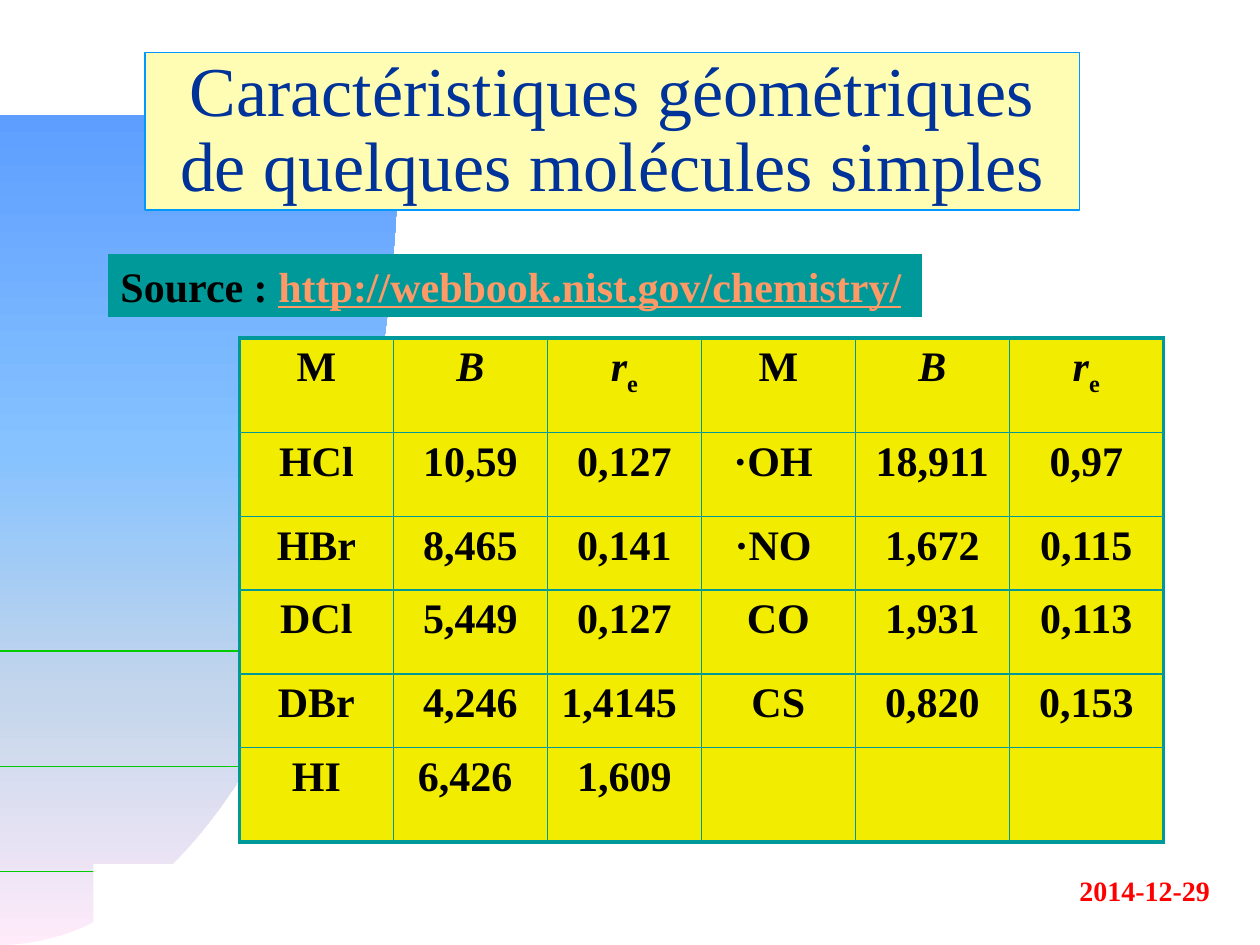
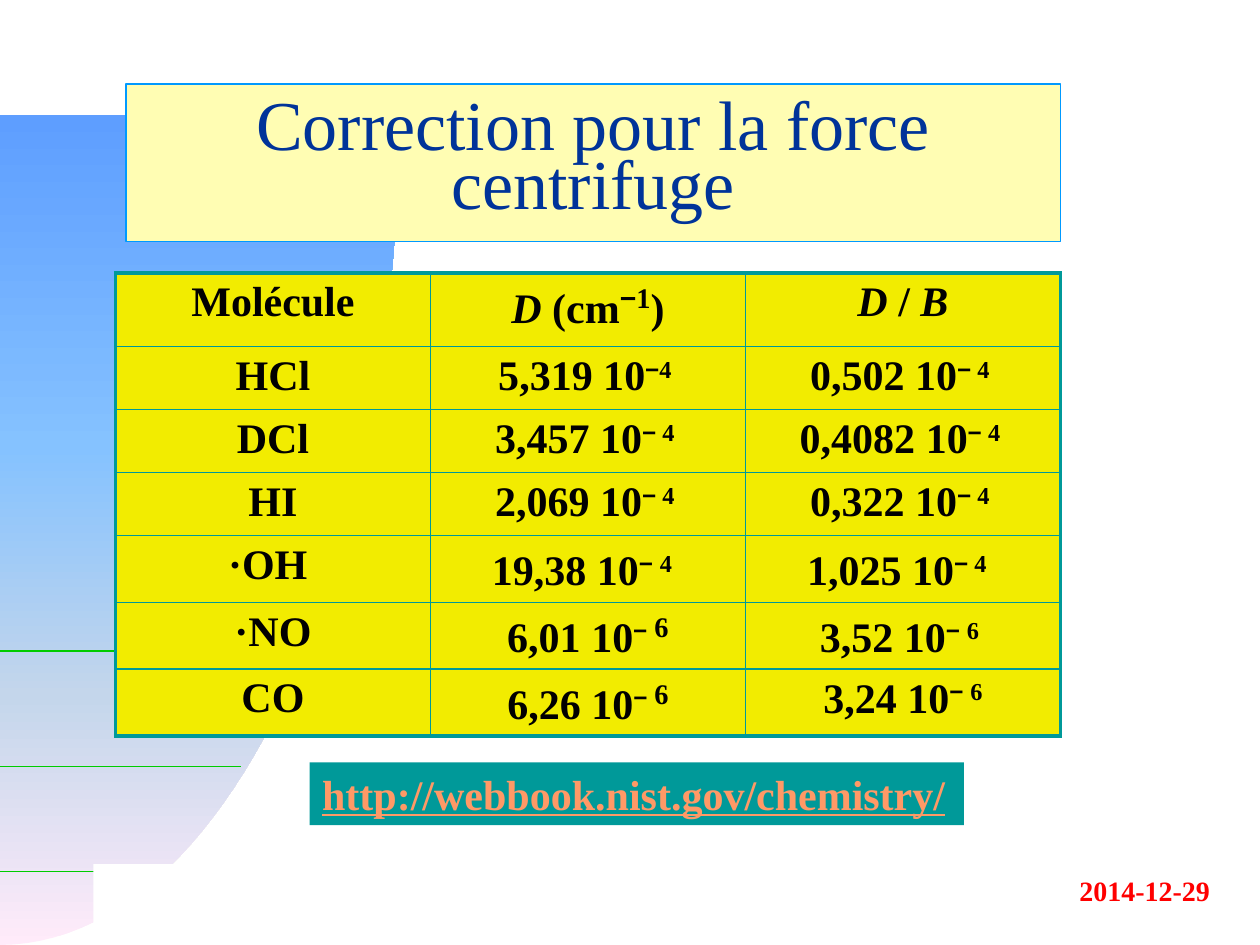
from lxml import etree
from pptx import Presentation
from pptx.dml.color import RGBColor
from pptx.enum.shapes import MSO_CONNECTOR, MSO_SHAPE
from pptx.enum.text import MSO_ANCHOR, MSO_AUTO_SIZE, PP_ALIGN
from pptx.oxml.ns import qn
from pptx.util import Inches, Pt

LEFT, CENTER, RIGHT = PP_ALIGN.LEFT, PP_ALIGN.CENTER, PP_ALIGN.RIGHT
MIDDLE = MSO_ANCHOR.MIDDLE
NO_FIT, GROW = MSO_AUTO_SIZE.NONE, MSO_AUTO_SIZE.SHAPE_TO_FIT_TEXT
RECT, STRAIGHT = MSO_SHAPE.RECTANGLE, MSO_CONNECTOR.STRAIGHT
TITLE_ONLY = 5

COLUMNS, ROWS = 120, 90
SERIF, SANS = "Times New Roman", "Arial"
NAVY, CREAM, SKY = "003399", "FFFDB3", "0099FF"
TEAL, YELLOW, ORANGE = "009999", "F2EC00", "FF9966"
GREEN, RED, WHITE, BLACK = "00CC00", "FF0000", "FFFFFF", "010000"
ARC_STOPS = [(0, "FFEBFA"), (30, "C4D6EB"), (60, "85C2FF"), (100, "5E9EFF")]
ARC_CURVE = [(0, 90), (21, 90), (38, 54.7), (38, 11)]
ARC_STEPS = 48
GREEN_LINES = [(23, 73), (29, 62), (16, 83)]
OUTER, INNER = 2.25, 1

URL = "http://webbook.nist.gov/chemistry/"
DATE = "2014-12-29"


def rgb(code):
    return RGBColor.from_string(code)


def bezier(points, t):
    weights = ((1 - t) ** 3, 3 * t * (1 - t) ** 2, 3 * t * t * (1 - t), t ** 3)
    return [sum(w * v for w, v in zip(weights, axis)) for axis in zip(*points)]


class Deck:
    """Holds the style and the current slide; lengths are grid columns and rows."""

    def __init__(self):
        self.prs = Presentation()
        self.prs.slide_width, self.prs.slide_height = Inches(10), Inches(7.5)
        self.s = None

    def x(self, columns):
        return round(self.prs.slide_width * columns / COLUMNS)

    def y(self, rows):
        return round(self.prs.slide_height * rows / ROWS)

    def box(self, left, top, width, height):
        return self.x(left), self.y(top), self.x(width), self.y(height)

    def new_slide(self, title, left, top, spacing):
        self.s = self.prs.slides.add_slide(self.prs.slide_layouts[TITLE_ONLY])
        self.arc()
        for length, row in GREEN_LINES:
            self.line(length, row)
        self.date()
        self.rect(8.9, 82.3, 19.6, 5.6, WHITE)
        self.title(title, left, top, spacing)

    def arc(self):
        curve = [bezier(ARC_CURVE, i / ARC_STEPS) for i in range(ARC_STEPS + 1)]
        points = [(self.x(col), self.y(row)) for col, row in curve + [(0, 11)]]
        builder = self.s.shapes.build_freeform(*points[0], scale=1.0)
        builder.add_line_segments(points[1:], close=True)
        sp = builder.convert_to_shape()
        sp.shadow.inherit = False
        sp.line.fill.background()
        sp.fill.gradient()
        sp.fill.gradient_angle = 90
        stops = sp.element.find(".//" + qn("a:gsLst"))
        for old in list(stops):
            stops.remove(old)
        for percent, code in ARC_STOPS:
            stop = etree.SubElement(stops, qn("a:gs"), pos=str(percent * 1000))
            etree.SubElement(stop, qn("a:srgbClr"), val=code)

    def line(self, length, row):
        ends = 0, self.y(row), self.x(length), self.y(row)
        cn = self.s.shapes.add_connector(STRAIGHT, *ends)
        cn.line.color.rgb = rgb(GREEN)
        cn.line.width = Pt(0.75)
        etree.SubElement(cn.element.spPr, qn("a:effectLst"))

    def rect(self, left, top, width, height, fill):
        sp = self.s.shapes.add_shape(RECT, *self.box(left, top, width, height))
        sp.shadow.inherit = False
        sp.fill.solid()
        sp.fill.fore_color.rgb = rgb(fill)
        sp.line.fill.background()
        return sp

    def run(self, p, text, size=24, color=BLACK, bold=True, italic=False,
            font=SERIF, underline=False, base=0):
        r = p.add_run()
        r.text = text
        r.font.name, r.font.size = font, Pt(size)
        r.font.bold, r.font.italic = bold, italic
        r.font.underline = underline
        r.font.color.rgb = rgb(color)
        if base:
            r.font._element.set("baseline", str(base * 1000))

    def date(self):
        tf = self.s.shapes.add_textbox(*self.box(98.4, 82.6, 18, 4.4)).text_frame
        tf.word_wrap = True
        p = tf.paragraphs[0]
        p.alignment = RIGHT
        self.run(p, DATE, size=16, color=RED)

    def title(self, text, left, top, spacing):
        sp = self.s.shapes.title
        sp.element.getparent().append(sp.element)  # above the background
        sp.left, sp.top, sp.width, sp.height = self.box(left, top, 89, 15)
        sp.fill.solid()
        sp.fill.fore_color.rgb = rgb(CREAM)
        sp.line.color.rgb = rgb(SKY)
        sp.line.width = Pt(0.75)
        tf = sp.text_frame
        tf.word_wrap, tf.auto_size, tf.vertical_anchor = True, NO_FIT, MIDDLE
        p = tf.paragraphs[0]
        p.alignment, p.line_spacing = CENTER, spacing
        self.run(p, text, size=40, color=NAVY, bold=False)

    def source(self, left, top, width, label=""):
        tf = self.rect(left, top, width, 6, TEAL).text_frame
        tf.word_wrap, tf.auto_size = False, GROW
        p = tf.paragraphs[0]
        p.alignment = LEFT
        if label:
            self.run(p, label)
        self.run(p, URL, color=ORANGE, underline=True)

    def border(self, cell, tag, width):
        props = cell._tc.get_or_add_tcPr()
        ln = etree.SubElement(props, qn(tag), w=str(Pt(width)))
        fill = etree.SubElement(ln, qn("a:solidFill"))
        etree.SubElement(fill, qn("a:srgbClr"), val=TEAL)

    def table(self, left, top, width, heights, data):
        n_rows, n_cols = len(data), len(data[0])
        frame = self.s.shapes.add_table(
            n_rows, n_cols, *self.box(left, top, width, sum(heights)))
        tbl = frame.table
        tbl.first_row = tbl.horz_banding = False
        for row, height in zip(tbl.rows, heights):
            row.height = self.y(height)
        for i, values in enumerate(data):
            for j, runs in enumerate(values):
                cell = tbl.cell(i, j)
                edges = {"a:lnL": j == 0, "a:lnR": j == n_cols - 1,
                         "a:lnT": i == 0, "a:lnB": i == n_rows - 1}
                for tag, outside in edges.items():
                    self.border(cell, tag, OUTER if outside else INNER)
                cell.fill.solid()
                cell.fill.fore_color.rgb = rgb(YELLOW)
                p = cell.text_frame.paragraphs[0]
                p.alignment = CENTER
                for text, style in runs:
                    self.run(p, text, **style)


def plain(text):
    return [(text, {})] if text else []


def italic(text):
    return (text, {"italic": True})


def power(mantissa, exponent, minus="−", size=24, tail=None):
    """Runs of a number times a negative power of ten."""
    runs = [(mantissa + " 10", {}), (minus, {"font": SANS, "base": 30}),
            (exponent, {"size": size, "base": 30})]
    return runs + ([tail] if tail else [])


BIG_SPACE = (" ", {"size": 28})
RAISED_SPACE = (" ", {"size": 28, "base": 30})

GEOMETRY_HEAD = [plain("M"), [italic("B")], [italic("r"), ("e", {"base": -25})]]
GEOMETRY = [
    ["HCl", "10,59", "0,127", "·OH ", "18,911", "0,97"],
    ["HBr", "8,465", "0,141", "·NO ", "1,672", "0,115"],
    ["DCl", "5,449", "0,127", "CO", "1,931", "0,113"],
    ["DBr", "4,246", "1,4145 ", "CS", "0,820", "0,153"],
    ["HI", "6,426 ", "1,609", "", "", ""],
]
CENTRIFUGAL = [
    [plain("Molécule"),
     [italic("D "), ("(cm", {}), ("−", {"size": 28, "font": SANS, "base": 30}),
      ("1", {"size": 28, "base": 30}), (")", {})],
     [italic("D"), (" / ", {}), italic("B")]],
    [plain("HCl"), power("5,319", "4 "), power("0,502", " 4 ")],
    [plain("DCl"), power("3,457", " 4 "), power("0,4082", " 4 ")],
    [plain("HI"), power("2,069", " 4 "), power("0,322", " 4 ")],
    [plain("·OH "), power("19,38", "4", "− ", tail=BIG_SPACE),
     power("1,025", " 4", tail=BIG_SPACE)],
    [plain("·NO"), power("6,01", " 6", size=28),
     power("3,52", "6", "− ", tail=RAISED_SPACE)],
    [plain("CO"), power("6,26", "6", "− ", size=28), power("3,24", "6", "− ")],
]


def main():
    deck = Deck()

    deck.new_slide("Caractéristiques géométriques de quelques molécules simples",
                   13.8, 5, 0.9)
    rows = [[plain(text) for text in row] for row in GEOMETRY]
    deck.table(22.8, 32.2, 88, [9, 8, 7, 8, 7, 9], [GEOMETRY_HEAD * 2] + rows)
    deck.source(10.3, 24.2, 77.5, "Source : ")

    deck.new_slide("Correction pour la force centrifuge", 12, 8, 0.7)
    deck.table(11, 26, 90, [7] + [6] * 6, CENTRIFUGAL)
    deck.source(29.5, 72.6, 62.3)

    deck.prs.save("out.pptx")


if __name__ == "__main__":
    main()
